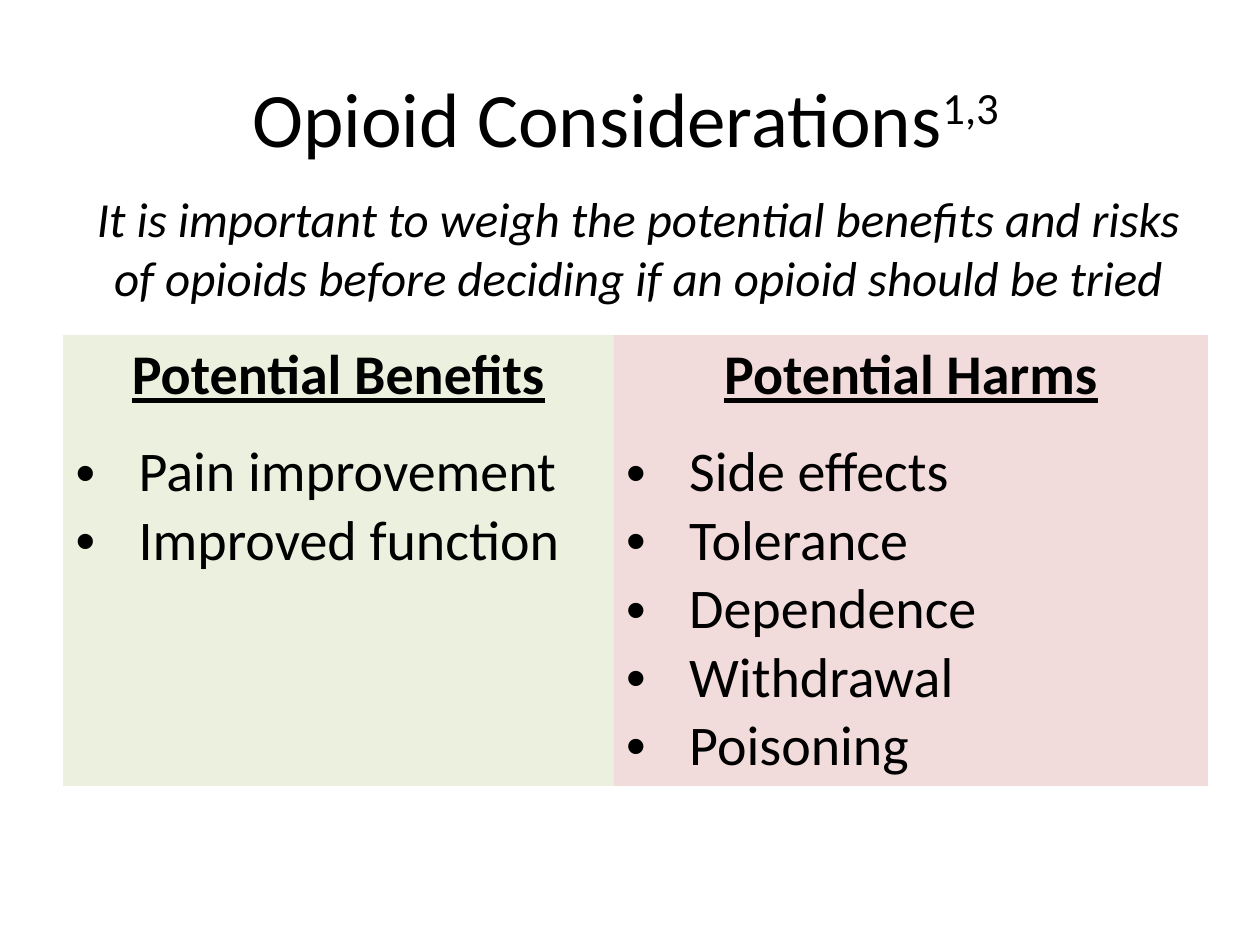
"""Build the opioid considerations slide with its benefits and harms table."""
import dataclasses

import lxml.etree
import pptx
import pptx.dml.color
import pptx.enum.text
import pptx.oxml.ns
import pptx.util

Inches = pptx.util.Inches
Align = pptx.enum.text.PP_ALIGN
Anchor = pptx.enum.text.MSO_ANCHOR


@dataclasses.dataclass(frozen=True)
class Theme:
    font: str = "Calibri"
    text: str = "000000"
    benefits: str = "EBF1DE"
    harms: str = "F2DCDB"
    title_size: int = 44
    subtitle_size: int = 28
    table_size: int = 32
    no_grid_style: str = "{2D5ABB26-0587-4C30-8999-92F81FD0307C}"


class SlideBuilder:
    def __init__(self, slide, theme):
        self.slide = slide
        self.theme = theme

    def add_run(self, paragraph, text, size, bold=False, italic=False,
                underline=False, baseline=0):
        run = paragraph.add_run()
        run.text = text
        font = run.font
        font.name = self.theme.font
        font.size = pptx.util.Pt(size)
        font.color.rgb = pptx.dml.color.RGBColor.from_string(self.theme.text)
        font.bold, font.italic, font.underline = bold, italic, underline
        if baseline:
            run._r.get_or_add_rPr().set("baseline", str(baseline * 1000))

    def add_text(self, left, top, width, height, anchor):
        shape = self.slide.shapes.add_textbox(
            Inches(left), Inches(top), Inches(width), Inches(height))
        frame = shape.text_frame
        frame.word_wrap = True
        frame.vertical_anchor = anchor
        paragraph = frame.paragraphs[0]
        paragraph.alignment = Align.CENTER
        return paragraph

    def add_bullet(self, paragraph, text):
        properties = paragraph._p.get_or_add_pPr()
        properties.set("marL", str(Inches(0.5)))
        properties.set("indent", str(-Inches(0.5)))
        qn = pptx.oxml.ns.qn
        lxml.etree.SubElement(properties, qn("a:buFont"), typeface="Arial")
        lxml.etree.SubElement(properties, qn("a:buChar"), char="•")
        self.add_run(paragraph, text, self.theme.table_size)

    def add_comparison(self, left, top, widths, heights, columns):
        table = self.slide.shapes.add_table(
            len(heights), len(widths), Inches(left), Inches(top),
            Inches(sum(widths)), Inches(sum(heights))).table
        table.first_row = table.horz_banding = False
        style = table._tbl.tblPr.find(pptx.oxml.ns.qn("a:tableStyleId"))
        style.text = self.theme.no_grid_style
        for row, height in zip(table.rows, heights):
            row.height = Inches(height)
        for index, (heading, items, fill) in enumerate(columns):
            table.columns[index].width = Inches(widths[index])
            header, body = table.cell(0, index), table.cell(1, index)
            for cell in (header, body):
                cell.fill.solid()
                cell.fill.fore_color.rgb = pptx.dml.color.RGBColor.from_string(fill)
            paragraph = header.text_frame.paragraphs[0]
            paragraph.alignment = Align.CENTER
            self.add_run(paragraph, heading, self.theme.table_size,
                         bold=True, underline=True)
            frame = body.text_frame
            for position, item in enumerate(items):
                paragraph = frame.add_paragraph() if position else frame.paragraphs[0]
                self.add_bullet(paragraph, item)


def main():
    presentation = pptx.Presentation()
    presentation.slide_width = Inches(10)
    presentation.slide_height = Inches(7.5)
    slide = presentation.slides.add_slide(presentation.slide_layouts[6])
    theme = Theme()
    builder = SlideBuilder(slide, theme)

    title = builder.add_text(0.3, 0.3, 9.41, 1.25, Anchor.MIDDLE)
    builder.add_run(title, "Opioid Considerations", theme.title_size)
    builder.add_run(title, "1,3 ", theme.title_size, baseline=30)

    builder.add_comparison(0.5, 2.66, (4.37, 4.72), (0.77, 2.81), (
        ("Potential Benefits",
         ("Pain improvement", "Improved function"), theme.benefits),
        ("Potential Harms",
         ("Side effects", "Tolerance", "Dependence", "Withdrawal", "Poisoning"),
         theme.harms),
    ))

    subtitle = builder.add_text(0.54, 1.45, 9.05, 1.01, Anchor.TOP)
    subtitle.space_before = pptx.util.Pt(theme.subtitle_size * 0.2)
    builder.add_run(
        subtitle,
        "It is important to weigh the potential benefits and risks of opioids "
        "before deciding if an opioid should be tried",
        theme.subtitle_size, italic=True)

    presentation.save("out.pptx")


if __name__ == "__main__":
    main()
